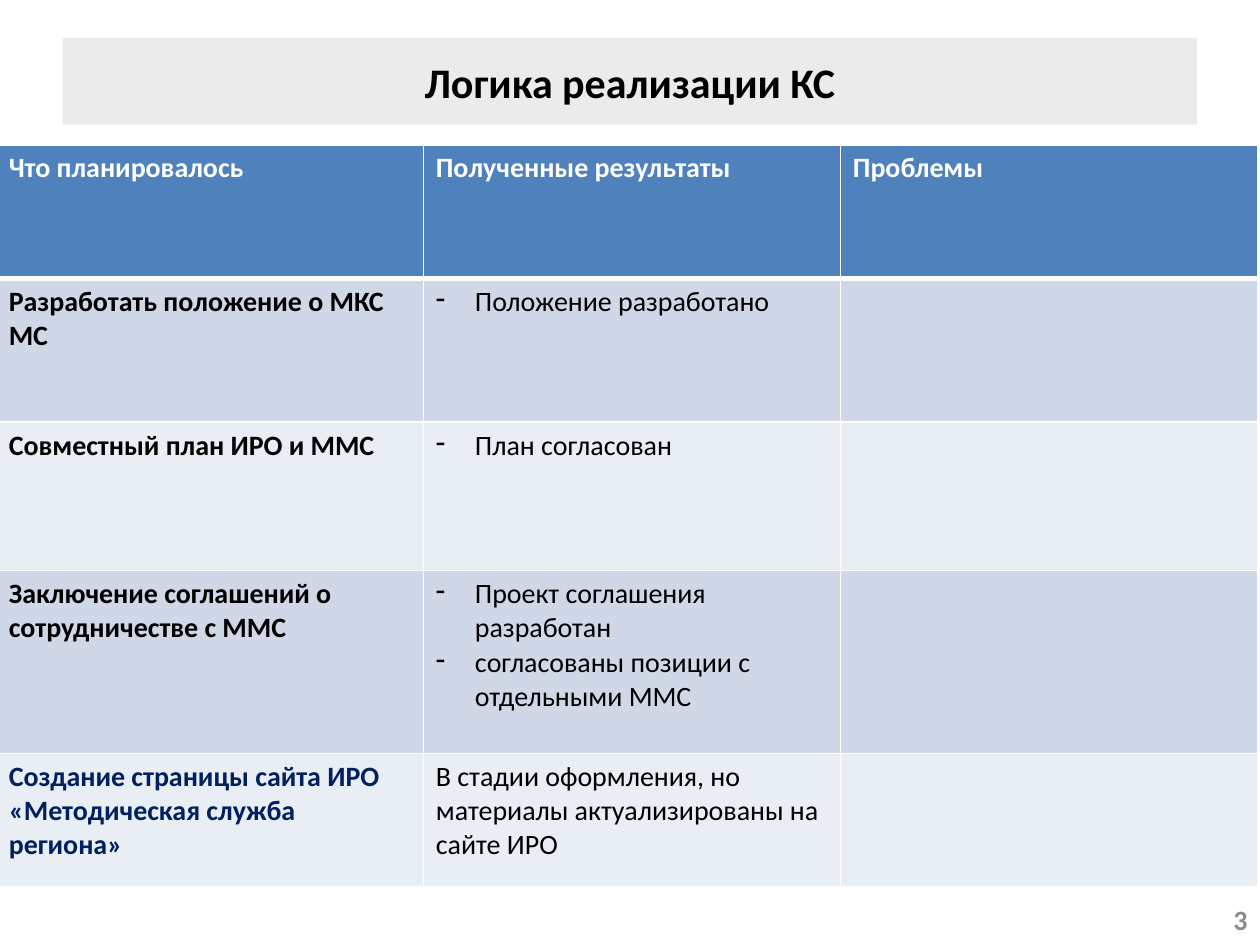
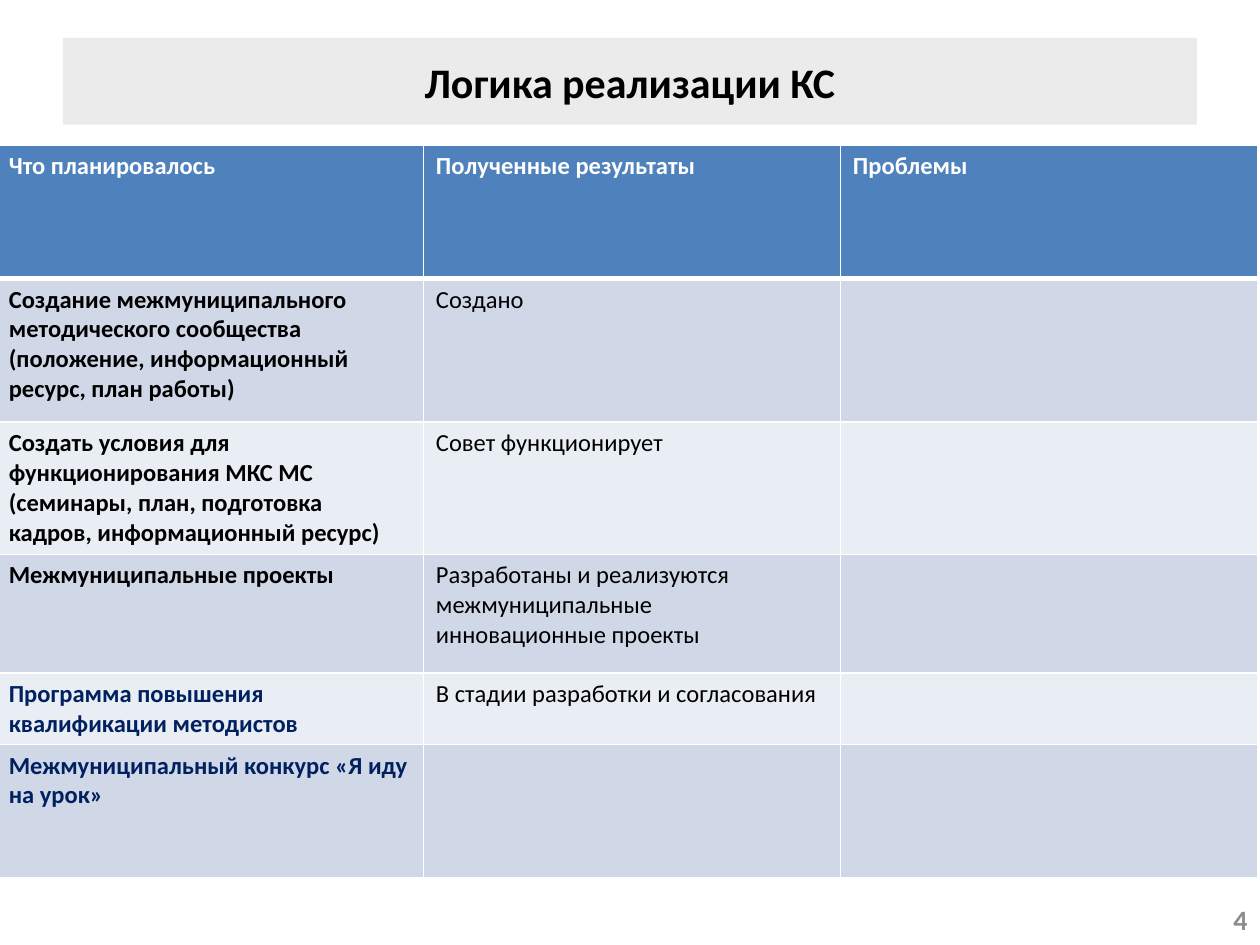
"""Builds two slides with tables of plans, results and problems."""
from lxml.etree import SubElement
from pptx import Presentation
from pptx.dml.color import RGBColor as Color
from pptx.enum.shapes import MSO_SHAPE as Shape
from pptx.enum.text import MSO_ANCHOR as Anchor, PP_ALIGN as Align
from pptx.oxml.ns import qn
from pptx.util import Inches, Pt

COLORS = {"band": "BFBFBF", "black": "000000", "white": "FFFFFF", "number": "8C8C8C",
          "header": "4F81BD", "odd": "D0D8E8", "even": "E9EDF4", "navy": "002060"}
FONT = "Calibri"
TITLE = "Логика реализации КС"
HEADERS = ["Что планировалось", "Полученные результаты", "Проблемы"]
HEADER_HEIGHT = 1.06
COLUMN_WIDTHS = [3.39, 3.31, 3.31]
BULLET_INDENT = Inches(0.31)

SLIDES = [
    {"number": 3, "size": 16, "rows": [
        (1.14, "black", "Разработать положение о МКС МС", ["Положение разработано"]),
        (1.18, "black", "Совместный план ИРО и ММС", ["План согласован"]),
        (1.45, "black", "Заключение соглашений о сотрудничестве с ММС",
         ["Проект соглашения разработан", "согласованы позиции с отдельными ММС"]),
        (1.06, "navy", "Создание страницы сайта ИРО «Методическая служба региона»",
         "В стадии оформления, но материалы актуализированы на сайте ИРО"),
    ]},
    {"number": 4, "size": 14, "rows": [
        (1.14, "black", "Создание межмуниципального методического сообщества "
         "(положение, информационный ресурс, план работы)", "Создано"),
        (1.05, "black", "Создать условия для функционирования МКС МС "
         "(семинары, план, подготовка кадров, информационный ресурс)", "Совет функционирует"),
        (0.94, "black", "Межмуниципальные проекты",
         "Разработаны и реализуются межмуниципальные инновационные проекты"),
        (0.57, "navy", "Программа повышения квалификации методистов",
         "В стадии разработки и согласования"),
        (1.06, "navy", "Межмуниципальный конкурс «Я иду на урок»", ""),
    ]},
]


def write(paragraph, text, size, color, bold=True, align=Align.LEFT):
    paragraph.text = text
    paragraph.alignment = align
    font = paragraph.font
    font.name, font.size, font.bold = FONT, Pt(size), bold
    font.color.rgb = Color.from_string(COLORS[color])


def style_cell(cell, fill, top, bottom):
    properties = cell._tc.get_or_add_tcPr()
    for side, width in (("L", 1), ("R", 1), ("T", top), ("B", bottom)):
        line = SubElement(properties, qn(f"a:ln{side}"), w=str(Pt(width)))
        SubElement(SubElement(line, qn("a:solidFill")), qn("a:srgbClr"), val=COLORS["white"])
    cell.fill.solid()
    cell.fill.fore_color.rgb = Color.from_string(COLORS[fill])


presentation = Presentation()
presentation.slide_width, presentation.slide_height = Inches(10), Inches(7.5)

for content in SLIDES:
    slide = presentation.slides.add_slide(presentation.slide_layouts[6])
    size = content["size"]

    band = slide.shapes.add_shape(Shape.RECTANGLE, Inches(0.5), Inches(0.3), Inches(9), Inches(0.69))
    band.shadow.inherit = False
    band.line.fill.background()
    band.fill.solid()
    band.fill.fore_color.rgb = Color.from_string(COLORS["band"])
    band_color = band._element.spPr.find(f"{qn('a:solidFill')}/{qn('a:srgbClr')}")
    SubElement(band_color, qn("a:alpha"), val="30000")
    band.text_frame.vertical_anchor = Anchor.MIDDLE
    write(band.text_frame.paragraphs[0], TITLE, 24, "black", align=Align.CENTER)

    number_box = slide.shapes.add_textbox(Inches(7.67), Inches(7.1), Inches(2.33), Inches(0.4))
    number_box.text_frame.word_wrap = True
    number_box.text_frame.vertical_anchor = Anchor.MIDDLE
    write(number_box.text_frame.paragraphs[0], str(content["number"]), 16, "number", align=Align.RIGHT)

    heights = [HEADER_HEIGHT] + [row[0] for row in content["rows"]]
    table = slide.shapes.add_table(len(heights), len(HEADERS), Inches(-0.03), Inches(1.15),
                                   Inches(sum(COLUMN_WIDTHS)), Inches(sum(heights))).table
    for column, width in zip(table.columns, COLUMN_WIDTHS):
        column.width = Inches(width)
    for index, height in enumerate(heights):
        table.rows[index].height = Inches(height)
        fill = "header" if index == 0 else "odd" if index % 2 else "even"
        for cell in table.rows[index].cells:
            style_cell(cell, fill, top=3 if index == 1 else 1, bottom=3 if index == 0 else 1)

    for cell, header in zip(table.rows[0].cells, HEADERS):
        write(cell.text_frame.paragraphs[0], header, size, "white")

    for index, (height, color, plan, results) in enumerate(content["rows"], start=1):
        plan_paragraph = table.cell(index, 0).text_frame.paragraphs[0]
        write(plan_paragraph, plan, size, color)
        if color == "navy":
            plan_paragraph.space_after = Pt(10)

        result_frame = table.cell(index, 1).text_frame
        bulleted = isinstance(results, list)
        for position, result in enumerate(results if bulleted else [results]):
            paragraph = result_frame.add_paragraph() if position else result_frame.paragraphs[0]
            if bulleted:
                properties = paragraph._p.get_or_add_pPr()
                properties.set("marL", str(BULLET_INDENT))
                properties.set("indent", str(-BULLET_INDENT))
                SubElement(properties, qn("a:buChar"), char="-")
            write(paragraph, result, size, "black", bold=False)

presentation.save("out.pptx")
